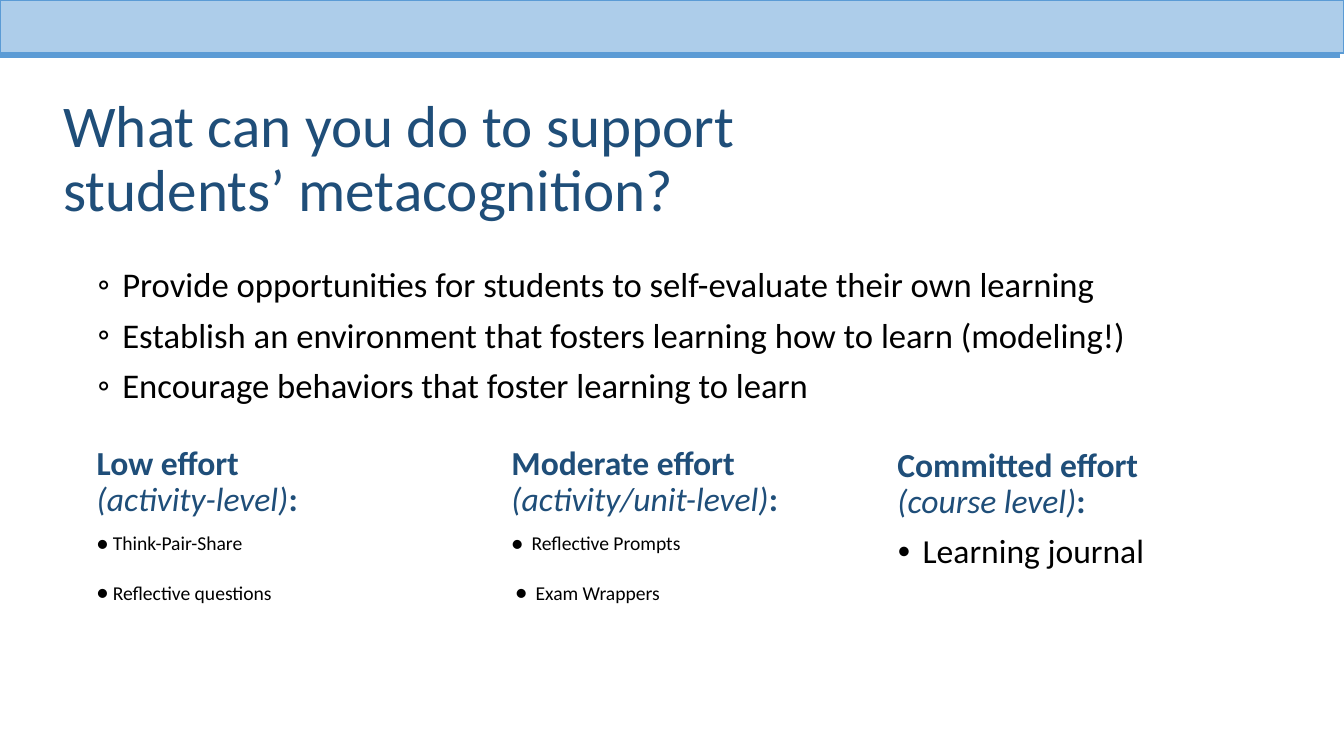
import pptx
import pptx.dml.color
import pptx.enum.shapes
import pptx.enum.text
import pptx.oxml.ns
import pptx.util
from lxml import etree

Inches = pptx.util.Inches
Pt = pptx.util.Pt
RGBColor = pptx.dml.color.RGBColor
Anchor = pptx.enum.text.MSO_ANCHOR

NAVY = RGBColor(0x1F, 0x4E, 0x79)
BLACK = RGBColor(0x00, 0x00, 0x00)
BLUE = RGBColor(0x5B, 0x9B, 0xD5)
PALE_BLUE = RGBColor(0xAD, 0xCD, 0xEA)

TITLE = {"size": Pt(84.5), "color": NAVY}
BODY = {"size": Pt(49.5), "color": BLACK}
HEADING = {"size": Pt(48), "color": NAVY, "bold": True}
LEVEL = {"size": Pt(48), "color": NAVY, "italic": True}
ITEM = {"size": Pt(48), "color": BLACK}
SMALL_ITEM = {"size": Pt(28), "color": BLACK}


class SlideBuilder:
    font_name = "Calibri"
    inset = Inches(0.1)
    line_spacing = 0.9

    def __init__(self, slide):
        self.slide = slide

    def text(self, box, paragraphs, anchor=Anchor.TOP):
        """Add a text box; each paragraph is (runs, bullet, space before)."""
        shape = self.slide.shapes.add_textbox(*map(Inches, box))
        frame = shape.text_frame
        settings = {"word_wrap": True, "vertical_anchor": anchor}
        for side in ("left", "right", "top", "bottom"):
            settings[f"margin_{side}"] = self.inset
        for name, value in settings.items():
            setattr(frame, name, value)
        for index, (runs, bullet, space) in enumerate(paragraphs):
            paragraph = frame.add_paragraph() if index else frame.paragraphs[0]
            paragraph.line_spacing = self.line_spacing
            if index:
                paragraph.space_before = Pt(space)
            if bullet:
                self.bullet(paragraph, *bullet)
            for words, style in runs:
                self.run(paragraph, words, style)

    def bullet(self, paragraph, character, hanging, percent=100, offset=0):
        properties = paragraph._p.get_or_add_pPr()
        properties.set("marL", str(Inches(offset + hanging)))
        properties.set("indent", str(-Inches(hanging)))
        for tag, name, value in (
            ("a:buSzPct", "val", str(percent * 1000)),
            ("a:buFont", "typeface", self.font_name),
            ("a:buChar", "char", character),
        ):
            etree.SubElement(properties, pptx.oxml.ns.qn(tag)).set(name, value)

    def run(self, paragraph, words, style):
        run = paragraph.add_run()
        run.text = words
        for name, value in {"name": self.font_name, **style}.items():
            if name == "color":
                run.font.color.rgb = value
            else:
                setattr(run.font, name, value)

    def line(self, start, end, color, width):
        connector = self.slide.shapes.add_connector(
            pptx.enum.shapes.MSO_CONNECTOR.STRAIGHT, *map(Inches, start + end))
        connector.line.color.rgb = color
        connector.line.width = Pt(width)
        etree.SubElement(connector._element.spPr, pptx.oxml.ns.qn("a:effectLst"))

    def rectangle(self, box, fill, outline, width):
        shape = self.slide.shapes.add_shape(
            pptx.enum.shapes.MSO_SHAPE.RECTANGLE, *map(Inches, box))
        shape.shadow.inherit = False
        shape.fill.solid()
        shape.fill.fore_color.rgb = fill
        shape.line.color.rgb = outline
        shape.line.width = Pt(width)


def main():
    presentation = pptx.Presentation()
    presentation.slide_width = Inches(26.67)
    presentation.slide_height = Inches(15)
    builder = SlideBuilder(presentation.slides.add_slide(presentation.slide_layouts[6]))

    builder.line((0, 1.07), (26.59, 1.07), BLUE, 11)
    builder.rectangle((0, 0, 26.67, 1.05), PALE_BLUE, BLUE, 2)

    title = "What can you do to support students’ metacognition?"
    builder.text((1.16, 1.74, 18.15, 2.88), [([(title, TITLE)], None, 0)], Anchor.MIDDLE)

    advice = (
        "Provide opportunities for students to self-evaluate their own learning",
        "Establish an environment that fosters learning how to learn (modeling!)",
        "Encourage behaviors that foster learning to learn",
    )
    builder.text((1.84, 5.21, 23, 3.62),
                 [([(words, BODY)], ("◦", 0.49), 19) for words in advice])

    # Each item: words, style, bullet, space before
    efforts = (
        ((1.82, 8.75, 6.99, 3.63), "Low effort", "(activity-level)", (
            ("Think-Pair-Share", SMALL_ITEM, ("●", 0.32), 22),
            ("Reflective questions", SMALL_ITEM, ("●", 0.32), 41))),
        ((10.05, 8.75, 6.42, 4.33), "Moderate effort", "(activity/unit-level)", (
            ("Reflective Prompts", SMALL_ITEM, ("●", 0.4), 22),
            ("Exam Wrappers", SMALL_ITEM, ("●", 0.4, 100, 0.08), 41))),
        ((17.71, 8.79, 6.32, 2.87), "Committed effort", "(course level)", (
            ("Learning journal", ITEM, ("•", 0.5, 80), 20),)),
    )
    for box, effort, level, items in efforts:
        paragraphs = [([(effort, HEADING)], None, 0),
                      ([(level, LEVEL), (":", HEADING)], None, 0)]
        paragraphs += [([(words, style)], bullet, space)
                       for words, style, bullet, space in items]
        builder.text(box, paragraphs)

    presentation.save("out.pptx")


if __name__ == "__main__":
    main()
